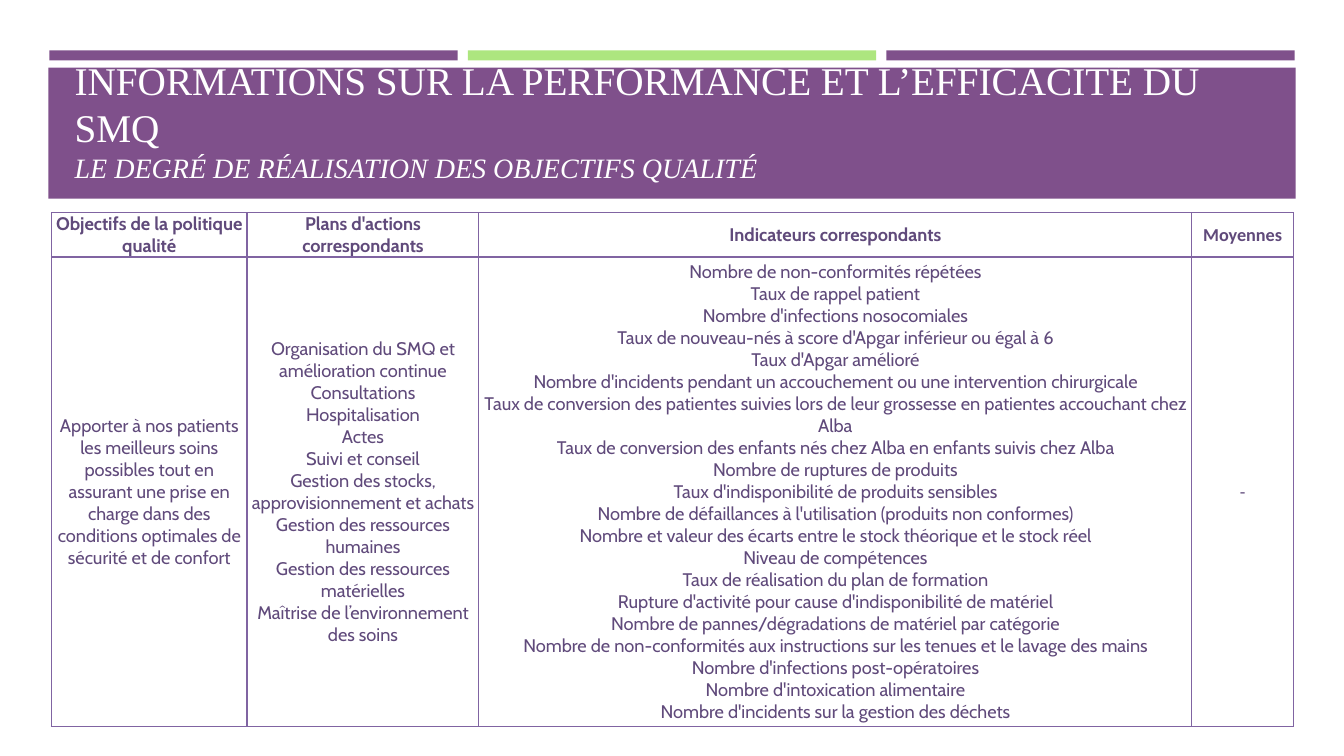
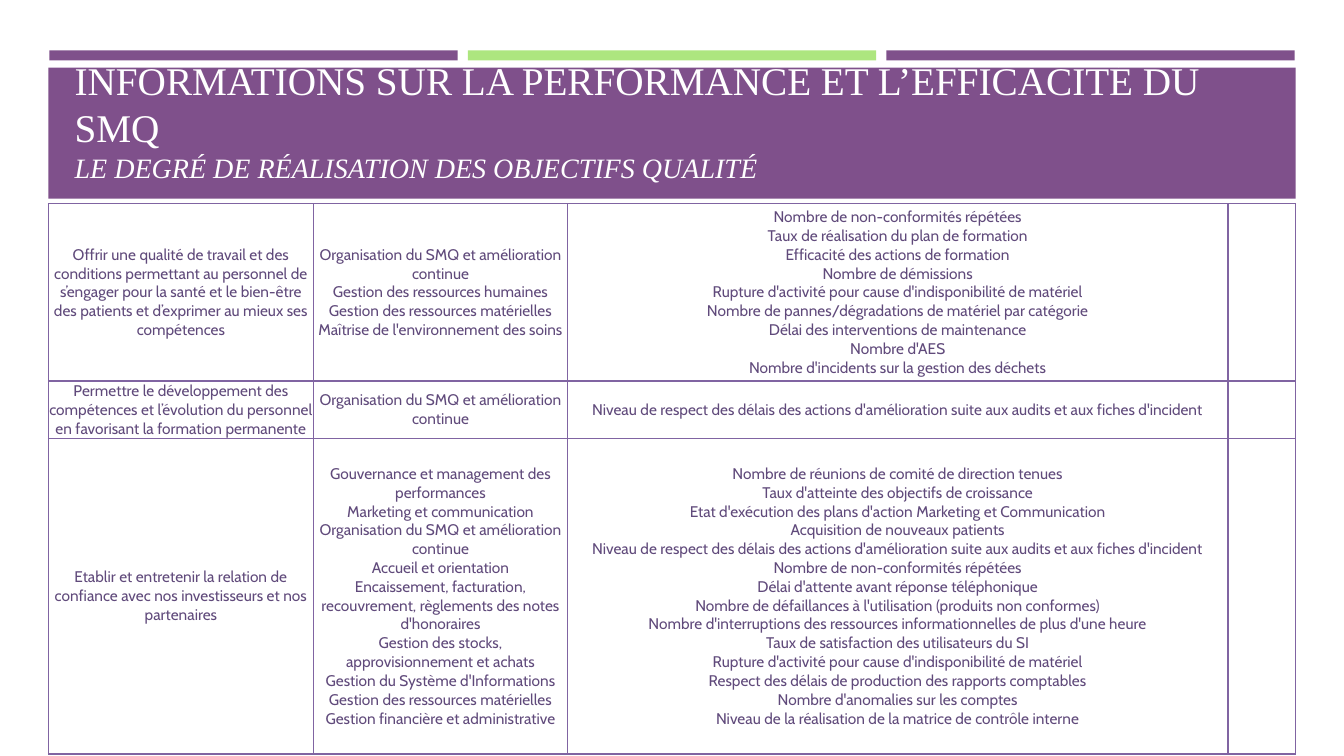
import pptx
import pptx.util
import pptx.dml.color
import pptx.enum.shapes
import pptx.enum.text
import pptx.oxml.ns
from lxml import etree

SCALE = 9144  # EMU in one px, 100 px to the inch
PURPLE, GREEN, WHITE = "7F508B", "ADE67F", "FFFFFF"
INK, RULE = "604A7B", "8064A2"
SERIF, SANS, PLAIN = "Times New Roman", "Cabin", "Calibri"


def px(n):
    return pptx.util.Emu(n * SCALE)


def color(code):
    return pptx.dml.color.RGBColor.from_string(code)


def node(parent, tag, **attrs):
    return etree.SubElement(parent, pptx.oxml.ns.qn(tag), **attrs)


class Deck:
    def __init__(self):
        self.prs = pptx.Presentation()
        self.prs.slide_width, self.prs.slide_height = px(1333), px(750)
        self.page = self.prs.slide_layouts[5]
        self.slide = None
        self.frame()

    # Shared layout: title place without footers
    def frame(self):
        for hold in list(self.page.placeholders):
            if hold.placeholder_format.idx:
                hold.element.getparent().remove(hold.element)
            else:
                hold.left, hold.top = px(64), px(77)
                hold.width, hold.height = px(1206), px(111)

    # Shared layout: bands, drawn once and kept behind the title
    def bands(self):
        tree = self.page.shapes.element
        bars = [(49 + 415 * i, 50, 405, 10, fill)
                for i, fill in enumerate((PURPLE, GREEN, PURPLE))]
        bars.append((48, 67, 1237, 130, PURPLE))
        for spot, bar in enumerate(bars, 2):
            tree.insert(spot, self.rect(*bar).element)

    def rect(self, x, y, w, h, fill):
        kind = pptx.enum.shapes.MSO_SHAPE.RECTANGLE
        box = self.slide.shapes.add_shape(kind, px(x), px(y), px(w), px(h))
        box.shadow.inherit = False
        box.fill.solid()
        box.fill.fore_color.rgb = color(fill)
        box.line.fill.background()
        return box

    def add(self, head, sub):
        first = self.slide is None
        self.slide = self.prs.slides.add_slide(self.page)
        if first:
            self.bands()
        self.title(head, sub)

    def run(self, para, text, size, face, ink, bold=False, slant=False):
        run = para.add_run()
        run.text = text
        font = run.font
        font.size, font.name = pptx.util.Pt(size), face
        font.bold, font.italic = bold, slant
        font.color.rgb = color(ink)

    def title(self, head, sub):
        frame = self.slide.shapes.title.text_frame
        frame.word_wrap = True
        frame.auto_size = pptx.enum.text.MSO_AUTO_SIZE.NONE
        frame.vertical_anchor = pptx.enum.text.MSO_ANCHOR.BOTTOM
        para = frame.paragraphs[0]
        para.alignment = pptx.enum.text.PP_ALIGN.LEFT
        self.run(para, head, 28, SERIF, WHITE)
        para.add_line_break()
        node(para.runs[0]._r.getnext(), "a:rPr", sz="2800")
        self.run(para, sub, 20, SERIF, WHITE, slant=True)

    def table(self, x, y, cols, rows, cells, size, header=False):
        grid = self.slide.shapes.add_table(
            len(rows), len(cols), px(x), px(y),
            px(sum(cols)), px(sum(rows))).table
        grid.first_row = header
        grid.horz_banding = False
        for col, wide in zip(grid.columns, cols):
            col.width = px(wide)
        for row, high in zip(grid.rows, rows):
            row.height = px(high)
        last = len(cols) - 1
        for r, row in enumerate(cells):
            for c, lines in enumerate(row):
                face = PLAIN if c == last else SANS
                self.cell(grid.cell(r, c), lines, size, face,
                          header and r == 0)

    def cell(self, cell, lines, size, face, bold):
        cell.margin_left = cell.margin_right = 0
        cell.margin_top = cell.margin_bottom = 0
        cell.vertical_anchor = pptx.enum.text.MSO_ANCHOR.MIDDLE
        for side in "LRTB":
            edge = node(cell._tc.tcPr, "a:ln" + side, w="12700")
            fill = node(edge, "a:solidFill")
            node(fill, "a:srgbClr", val=RULE)
        cell.fill.background()
        frame = cell.text_frame
        for i, line in enumerate(lines):
            para = frame.add_paragraph() if i else frame.paragraphs[0]
            para.alignment = pptx.enum.text.PP_ALIGN.CENTER
            self.run(para, line, size, face, INK, bold)


HEAD = "INFORMATIONS SUR LA PERFORMANCE ET L’EFFICACITÉ DU SMQ"
SUB = "LE DEGRÉ DE RÉALISATION DES OBJECTIFS QUALITÉ"

# Cells of slide 1, each a list of lines
CARE = [
    [["Objectifs de la politique qualité"],
     ["Plans d'actions correspondants"],
     ["Indicateurs correspondants"],
     ["Moyennes"]],
    [["Apporter à nos patients les meilleurs soins possibles tout en assurant "
      "une prise en charge dans des conditions optimales de sécurité et de "
      "confort"],
     ["Organisation du SMQ et amélioration continue",
      "Consultations",
      "Hospitalisation",
      "Actes",
      "Suivi et conseil",
      "Gestion des stocks, approvisionnement et achats",
      "Gestion des ressources humaines",
      "Gestion des ressources matérielles",
      "Maîtrise de l’environnement des soins"],
     ["Nombre de non-conformités répétées",
      "Taux de rappel patient",
      "Nombre d'infections nosocomiales",
      "Taux de nouveau-nés à score d'Apgar inférieur ou égal à 6",
      "Taux d'Apgar amélioré",
      "Nombre d'incidents pendant un accouchement ou une intervention "
      "chirurgicale",
      "Taux de conversion des patientes suivies lors de leur grossesse en "
      "patientes accouchant chez Alba",
      "Taux de conversion des enfants nés chez Alba en enfants suivis "
      "chez Alba",
      "Nombre de ruptures de produits",
      "Taux d'indisponibilité de produits sensibles",
      "Nombre de défaillances à l'utilisation (produits non conformes)",
      "Nombre et valeur des écarts entre le stock théorique et le stock réel",
      "Niveau de compétences",
      "Taux de réalisation du plan de formation",
      "Rupture d'activité pour cause d'indisponibilité de matériel",
      "Nombre de pannes/dégradations de matériel par catégorie",
      "Nombre de non-conformités aux instructions sur les tenues et le "
      "lavage des mains",
      "Nombre d'infections post-opératoires",
      "Nombre d'intoxication alimentaire",
      "Nombre d'incidents sur la gestion des déchets"],
     ["-"]],
]

# Cells of slide 2
STAFF = [
    [["Offrir une qualité de travail et des conditions permettant au "
      "personnel de s’engager pour la santé et le bien-être des patients et "
      "d’exprimer au mieux ses compétences"],
     ["Organisation du SMQ et amélioration continue",
      "Gestion des ressources humaines",
      "Gestion des ressources matérielles",
      "Maîtrise de l'environnement des soins"],
     ["Nombre de non-conformités répétées",
      "Taux de réalisation du plan de formation",
      "Efficacité des actions de formation",
      "Nombre de démissions",
      "Rupture d'activité pour cause d'indisponibilité de matériel",
      "Nombre de pannes/dégradations de matériel par catégorie",
      "Délai des interventions de maintenance",
      "Nombre d'AES",
      "Nombre d'incidents sur la gestion des déchets"],
     []],
    [["Permettre le développement des compétences et l’évolution du "
      "personnel en favorisant la formation permanente"],
     ["Organisation du SMQ et amélioration continue"],
     ["Niveau de respect des délais des actions d'amélioration suite aux "
      "audits et aux fiches d'incident"],
     []],
    [["Etablir et entretenir la relation de confiance avec nos "
      "investisseurs et nos partenaires"],
     ["Gouvernance et management des performances",
      "Marketing et communication",
      "Organisation du SMQ et amélioration continue",
      "Accueil et orientation",
      "Encaissement, facturation, recouvrement, règlements des notes "
      "d'honoraires",
      "Gestion des stocks, approvisionnement et achats",
      "Gestion du Système d'Informations",
      "Gestion des ressources matérielles",
      "Gestion financière et administrative"],
     ["Nombre de réunions de comité de direction tenues",
      "Taux d'atteinte des objectifs de croissance",
      "Etat d'exécution des plans d'action Marketing et Communication",
      "Acquisition de nouveaux patients",
      "Niveau de respect des délais des actions d'amélioration suite aux "
      "audits et aux fiches d'incident",
      "Nombre de non-conformités répétées",
      "Délai d'attente avant réponse téléphonique",
      "Nombre de défaillances à l'utilisation (produits non conformes)",
      "Nombre d'interruptions des ressources informationnelles de plus "
      "d'une heure",
      "Taux de satisfaction des utilisateurs du SI",
      "Rupture d'activité pour cause d'indisponibilité de matériel",
      "Respect des délais de production des rapports comptables",
      "Nombre d'anomalies sur les comptes",
      "Niveau de la réalisation de la matrice de contrôle interne"],
     []],
]


def main():
    deck = Deck()

    # Slide 1: quality of care
    deck.add(HEAD, SUB)
    deck.table(51, 211, (194, 230, 707, 101), (44, 466), CARE, 13, True)

    # Slide 2: staff and partners
    deck.add(HEAD, SUB)
    deck.table(48, 202, (263, 252, 655, 67), (176, 57, 313), STAFF, 11)

    deck.prs.save("out.pptx")


if __name__ == "__main__":
    main()
